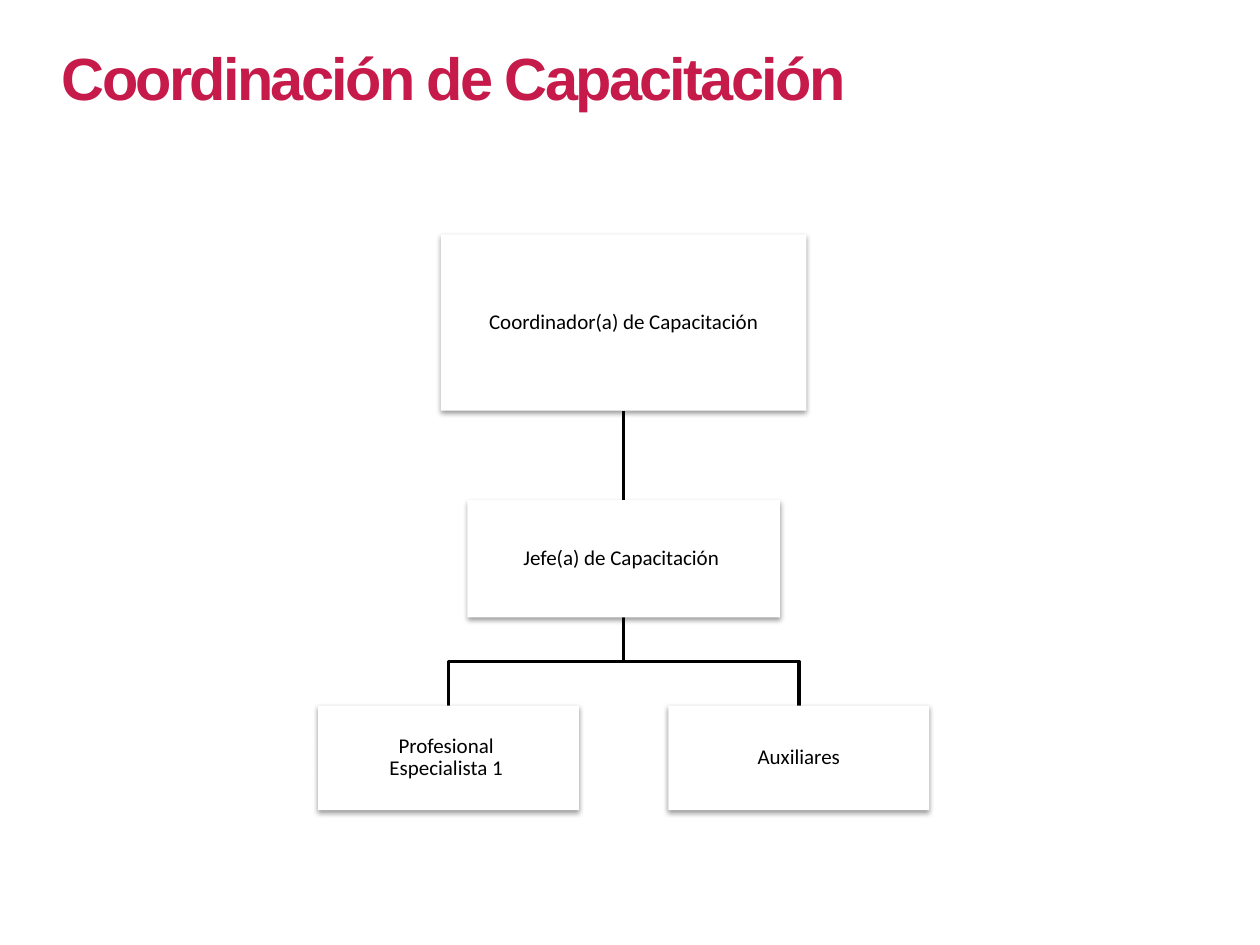
from lxml.etree import SubElement
from pptx import Presentation
from pptx.dml.color import RGBColor
from pptx.enum.shapes import MSO_SHAPE as Shape
from pptx.enum.text import MSO_ANCHOR as Anchor, MSO_AUTO_SIZE as AutoSize, PP_ALIGN as Align
from pptx.oxml.ns import qn
from pptx.util import Inches, Pt

CRIMSON = RGBColor(0xC5, 0x1A, 0x4A)
BLACK = RGBColor(0, 0, 0)
WHITE = RGBColor(0xFF, 0xFF, 0xFF)

CENTER = 4.95          # axis of the chart
BRANCH = 1.39          # offset of the lowest boxes from the axis

# Text lines, centre x, top, width, height
COORDINATOR = (["Coordinador(a) de Capacitación"], CENTER, 1.86, 2.9, 1.4)
HEAD = (["Jefe(a) de Capacitación "], CENTER, 3.97, 2.48, 0.93)
SPECIALIST = (["Profesional ", "Especialista 1 "], CENTER - BRANCH, 5.6, 2.07, 0.83)
ASSISTANTS = (["Auxiliares"], CENTER + BRANCH, 5.6, 2.07, 0.83)


def style_run(run, font_name, size, color):
    run.font.name = font_name
    run.font.size = Pt(size)
    run.font.color.rgb = color


def add_title(slide, text):
    title = slide.shapes.title
    title.left, title.top = Inches(0.39), Inches(0.26)
    title.width, title.height = Inches(6.97), Inches(0.69)
    frame = title.text_frame
    frame.auto_size = AutoSize.NONE
    frame.vertical_anchor = Anchor.MIDDLE
    paragraph = frame.paragraphs[0]
    paragraph.alignment = Align.LEFT
    run = paragraph.add_run()
    run.text = text
    style_run(run, "Arial", 34, CRIMSON)
    run.font.bold = True
    run.font.size.pt
    run._r.get_or_add_rPr().set("spc", "-150")


def add_soft_shadow(shape):
    shape.shadow.inherit = False
    effects = shape._element.spPr.find(qn("a:effectLst"))
    shadow = SubElement(effects, qn("a:outerShdw"), blurRad=str(Pt(3.1)),
                        dist=str(Pt(1.6)), dir="5400000", rotWithShape="0")
    color = SubElement(shadow, qn("a:srgbClr"), val=str(BLACK))
    SubElement(color, qn("a:alpha"), val="38000")


def add_position(slide, position):
    lines, center, top, width, height = position
    box = slide.shapes.add_shape(Shape.RECTANGLE, Inches(center - width / 2),
                                 Inches(top), Inches(width), Inches(height))
    box.fill.solid()
    box.fill.fore_color.rgb = WHITE
    box.line.fill.background()
    add_soft_shadow(box)

    frame = box.text_frame
    frame.word_wrap = True
    frame.vertical_anchor = Anchor.MIDDLE
    frame.margin_left = frame.margin_right = Inches(0.01)
    frame.margin_top = frame.margin_bottom = Inches(0.01)
    paragraph = frame.paragraphs[0]
    paragraph.alignment = Align.CENTER
    paragraph.line_spacing = 0.9
    paragraph.space_after = Pt(4.2)
    for index, line in enumerate(lines):
        if index:
            paragraph.add_line_break()
        run = paragraph.add_run()
        run.text = line
        style_run(run, "Calibri", 12, BLACK)


def add_link(slide, upper, lower):
    """Join the foot of one box to the top of another, turning halfway."""
    _, start_x, upper_top, _, upper_height = upper
    _, end_x, end_y, _, _ = lower
    start_y = upper_top + upper_height
    points = [(start_x, start_y), (end_x, end_y)]
    if start_x != end_x:
        middle = (start_y + end_y) / 2
        points[1:1] = [(start_x, middle), (end_x, middle)]
    corners = [(Inches(x), Inches(y)) for x, y in points]
    builder = slide.shapes.build_freeform(*corners[0])
    builder.add_line_segments(corners[1:], close=False)
    link = builder.convert_to_shape()
    link.fill.background()
    link.line.color.rgb = BLACK
    link.line.width = Pt(2)
    link.shadow.inherit = False


def main():
    prs = Presentation()
    prs.slide_width, prs.slide_height = Inches(10), Inches(7.5)
    slide = prs.slides.add_slide(prs.slide_layouts[5])
    add_title(slide, "Coordinación de Capacitación")

    # Links lie behind the boxes
    for upper, lower in ((HEAD, ASSISTANTS), (HEAD, SPECIALIST), (COORDINATOR, HEAD)):
        add_link(slide, upper, lower)
    for position in (COORDINATOR, HEAD, SPECIALIST, ASSISTANTS):
        add_position(slide, position)

    prs.save("out.pptx")


if __name__ == "__main__":
    main()
